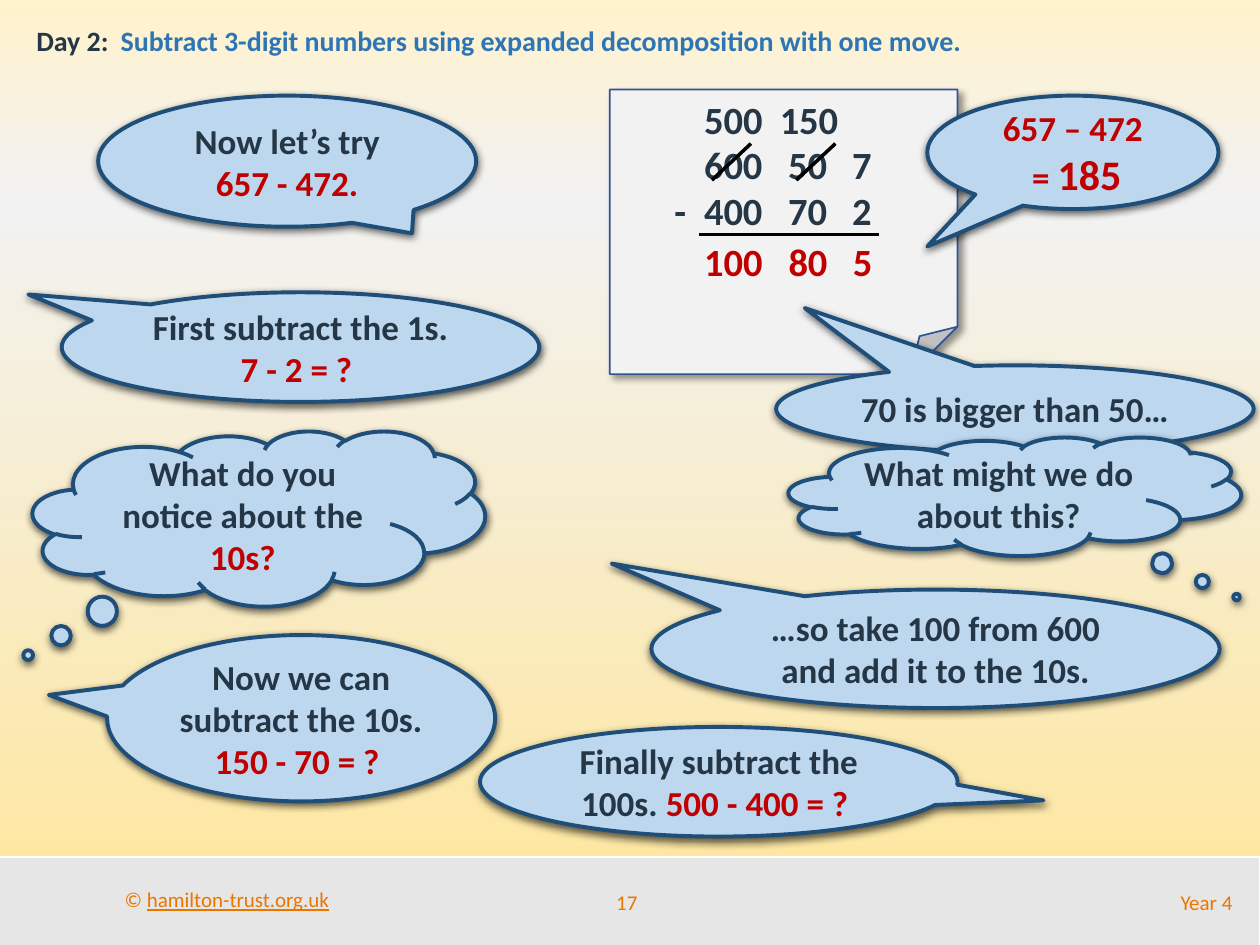
from dataclasses import dataclass

from lxml import etree
from pptx import Presentation
from pptx.dml.color import RGBColor
from pptx.enum.shapes import MSO_CONNECTOR, MSO_SHAPE
from pptx.enum.text import MSO_ANCHOR, PP_ALIGN
from pptx.oxml.ns import qn
from pptx.util import Inches, Pt

SPEECH, THOUGHT = MSO_SHAPE.OVAL_CALLOUT, MSO_SHAPE.CLOUD_CALLOUT
PAPER, BAR = MSO_SHAPE.FOLDED_CORNER, MSO_SHAPE.RECTANGLE
STRAIGHT = MSO_CONNECTOR.STRAIGHT
LEFT, CENTER, RIGHT = PP_ALIGN.LEFT, PP_ALIGN.CENTER, PP_ALIGN.RIGHT
TOP, MIDDLE = MSO_ANCHOR.TOP, MSO_ANCHOR.MIDDLE


@dataclass(frozen=True)
class Theme:
    font: str = "Calibri"
    ink: str = "253746"
    red: str = "C00000"
    blue: str = "2E75B6"
    orange: str = "EA7600"
    bubble: str = "BDD7EE"
    bubble_line: str = "1F4E79"
    paper: str = "F2F2F2"
    paper_line: str = "325491"
    footer: str = "E7E6E6"
    white: str = "FFFFFF"
    black: str = "000000"
    background: tuple = ((0, "FFF2CC"), (21, "F2F2F2"), (100, "FFE699"))
    footer_size: int = 12
    title_size: int = 16
    bubble_size: int = 20
    sum_size: int = 22
    answer_size: int = 24


THEME = Theme()

# Centres of the minus, hundreds, tens and ones columns, from the paper's left edge
COLUMNS = (0.56, 0.98, 1.57, 2.0)

# Kind, place, pointer adjustments, paragraphs of (text, format) spans
RED = {"color": THEME.red}
BUBBLES = (
    (SPEECH, (0.78, 0.76, 3, 1.04), (0.33, 0.55),
     [[("Now let’s try ", {}), ("657 - 472.", RED)]]),
    (SPEECH, (0.49, 2.32, 3.79, 0.87), (-0.57, -0.48),
     [[("First subtract the 1s. ", {}), ("7 - 2 = ? ", RED)]]),
    (THOUGHT, (0.26, 3.42, 3.59, 1.39), (-0.51, 0.78),
     [[("What do you notice about the ", {}), ("10s?", RED)]]),
    (SPEECH, (6.16, 2.9, 3.79, 0.69), (-0.44, -1.16),
     [[("70 is bigger than 50… ", {})]]),
    (SPEECH, (0.85, 5.04, 3.08, 1.32), (-0.65, -0.14),
     [[("Now we can subtract the 10s.", {})], [("150 - 70 = ? ", RED)]]),
    (SPEECH, (3.81, 5.77, 3.79, 0.87), (0.68, 0.17),
     [[("Finally subtract the 100s. ", {}), ("500 - 400 = ? ", RED)]]),
    (SPEECH, (7.36, 0.76, 2.31, 0.9), (-0.5, 0.83),
     [[("657 – 472", RED)],
      [(" = ", RED), ("185", {**RED, "size": THEME.answer_size})]]),
    (SPEECH, (5.17, 4.68, 4.51, 0.94), (-0.57, -0.72),
     [[("…so take 100 from 600 and add it to the 10s.", {})]]),
    (THOUGHT, (6.26, 3.47, 3.59, 0.94), (0.49, 0.85),
     [[("What might we do about this?", {})]]),
)


def rgb(color):
    return RGBColor.from_string(color)


def add_xml(parent, tag, **attributes):
    return etree.SubElement(parent, qn(tag), attributes)


def set_tabs(para, stops, align):
    tab_list = add_xml(para._p.get_or_add_pPr(), "a:tabLst")
    for stop in stops:
        add_xml(tab_list, "a:tab", pos=str(Inches(stop)), algn=align)


def write_text(shape, paragraphs, *, size, color=THEME.ink, bold=True, align=LEFT,
               anchor=TOP, wrap=True, tabs=(), tab_align="l"):
    """Fill a shape with paragraphs of (text, format) spans."""
    frame = shape.text_frame
    frame.word_wrap = wrap
    frame.vertical_anchor = anchor
    for index, spans in enumerate(paragraphs):
        para = frame.add_paragraph() if index else frame.paragraphs[0]
        para.alignment = align
        if tabs:
            set_tabs(para, tabs, tab_align)
        for text, look in spans:
            span = para.add_run()
            span.text = text
            font = span.font
            font.name = THEME.font
            font.size = Pt(look.get("size", size))
            font.bold = bold
            font.underline = look.get("underline")
            font.color.rgb = rgb(look.get("color", color))


def add_text(slide, place, paragraphs, **look):
    box = slide.shapes.add_textbox(*map(Inches, place))
    write_text(box, paragraphs, **look)


def add_shadow(shape, alpha, blur, distance, angle):
    effects = shape._element.spPr.find(qn("a:effectLst"))
    shadow = add_xml(effects, "a:outerShdw", blurRad=str(Pt(blur)), dist=str(Pt(distance)),
                     dir=str(angle * 60000), algn="ctr", rotWithShape="0")
    color = add_xml(shadow, "a:srgbClr", val=THEME.black)
    add_xml(color, "a:alpha", val=str(alpha * 1000))


def add_shape(slide, kind, place, fill, line, width):
    shape = slide.shapes.add_shape(kind, *map(Inches, place))
    shape.shadow.inherit = False
    shape.fill.solid()
    shape.fill.fore_color.rgb = rgb(fill)
    shape.line.color.rgb = rgb(line)
    shape.line.width = Pt(width)
    return shape


def add_bubble(slide, kind, place, pointer, paragraphs):
    bubble = add_shape(slide, kind, place, THEME.bubble, THEME.bubble_line, 2.25)
    for index, value in enumerate(pointer):
        bubble.adjustments[index] = value
    add_shadow(bubble, 63, 4.5, 1.5, 90)
    write_text(bubble, paragraphs, size=THEME.bubble_size, align=CENTER, anchor=MIDDLE)


def add_line(slide, *ends):
    line = slide.shapes.add_connector(STRAIGHT, *map(Inches, ends))
    line.line.color.rgb = rgb(THEME.black)
    line.line.width = Pt(2)
    add_xml(line._element.spPr, "a:effectLst")


def paint_background(slide):
    fill = slide.background.fill
    fill.gradient()
    fill.gradient_angle = 270
    stops = slide._element.find(".//" + qn("a:gsLst"))
    stops.clear()
    for position, color in THEME.background:
        stop = add_xml(stops, "a:gs", pos=str(position * 1000))
        add_xml(stop, "a:srgbClr", val=color)


def add_footer(slide):
    add_shape(slide, BAR, (-0.06, 6.8, 10.06, 0.72), THEME.footer, THEME.white, 1)
    look = {"size": THEME.footer_size, "color": THEME.orange, "bold": False}
    add_text(slide, (0.89, 6.99, 1.84, 0.3),
             [[("© ", {}), ("hamilton-trust.org.uk", {"underline": True})]],
             wrap=False, **look)
    add_text(slide, (4.58, 6.96, 0.79, 0.4), [[("17", {})]],
             align=CENTER, anchor=MIDDLE, **look)
    add_text(slide, (6.5, 6.96, 3.38, 0.4), [[("Year 4", {})]],
             align=RIGHT, anchor=MIDDLE, **look)


def add_subtraction(slide):
    paper = add_shape(slide, PAPER, (4.84, 0.71, 2.76, 2.26),
                      THEME.paper, THEME.paper_line, 1)
    add_shadow(paper, 40, 4, 3, 45)
    paper.text_frame.margin_left = 0
    paper.text_frame.margin_top = Inches(0.41)
    write_text(paper, [[("\t\t600\t50\t7", {})], [("\t-\t400\t70\t2", {})]],
               size=THEME.sum_size, tabs=COLUMNS, tab_align="ctr")
    add_line(slide, 5.55, 1.86, 6.98, 1.86)
    for left, digits in ((5.49, "100"), (6.16, "80"), (6.67, "5")):
        add_text(slide, (left, 1.84, 0.75, 0.47), [[(digits, {})]],
                 size=THEME.sum_size, color=THEME.red)
    for left in (5.65, 6.32):
        add_line(slide, left, 1.43, left + 0.31, 1.14)
    add_text(slide, (5.49, 0.71, 1.42, 0.47), [[("500\t150", {})]],
             size=THEME.sum_size, tabs=(0.6,))


def main():
    deck = Presentation()
    deck.slide_width, deck.slide_height = Inches(10), Inches(7.5)
    slide = deck.slides.add_slide(deck.slide_layouts[6])
    paint_background(slide)
    add_footer(slide)
    title = "Subtract 3-digit numbers using expanded decomposition with one move."
    add_text(slide, (0.19, 0.14, 9.54, 0.37),
             [[("Day 2:\t", {}), (title, {"color": THEME.blue})]],
             size=THEME.title_size, tabs=(0.67,))
    add_subtraction(slide)
    for bubble in BUBBLES:
        add_bubble(slide, *bubble)
    deck.save("out.pptx")


if __name__ == "__main__":
    main()
